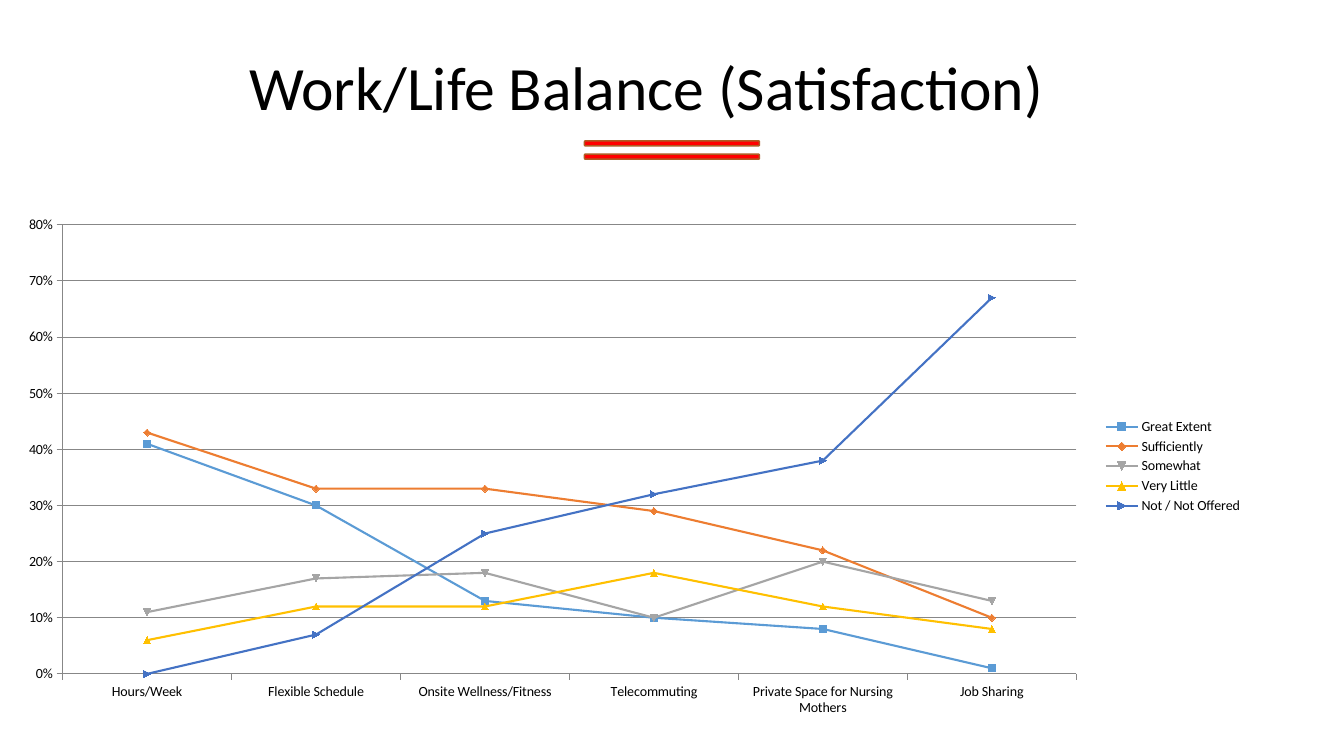
from pptx import Presentation
from pptx.chart.data import CategoryChartData
from pptx.dml.color import RGBColor
from pptx.enum.chart import XL_CHART_TYPE, XL_LEGEND_POSITION, XL_TICK_MARK
from pptx.enum.shapes import MSO_SHAPE
from pptx.enum.text import MSO_ANCHOR, PP_ALIGN
from pptx.util import Pt

# Content
TITLE = "Work/Life Balance (Satisfaction)"
TOPICS = ["Hours/Week", "Flexible Schedule", "Onsite Wellness/Fitness",
          "Telecommuting", "Private Space for Nursing Mothers", "Job Sharing"]
RATINGS = [
    ("Great Extent", "blue", [0.41, 0.3, 0.13, 0.1, 0.08, 0.01]),
    ("Sufficiently", "orange", [0.43, 0.33, 0.33, 0.29, 0.22, 0.1]),
    ("Somewhat", "gray", [0.11, 0.17, 0.18, 0.1, 0.2, 0.13]),
    ("Very Little", "gold", [0.06, 0.12, 0.12, 0.18, 0.12, 0.08]),
    ("Not / Not Offered", "navy", [0, 0.07, 0.25, 0.32, 0.38, 0.67]),
]
COLORS = {"blue": "5B9BD5", "orange": "ED7D31", "gray": "A5A5A5",
          "gold": "FFC000", "navy": "4472C4", "red": "FF0000",
          "rust": "AF5C24", "text": "000000", "grid": "878787"}
FONT = "Calibri"


def color(name):
    return RGBColor.from_string(COLORS[name])


def style(font, size):
    font.name, font.size = FONT, Pt(size)
    font.color.rgb = color("text")


def stroke(line, name, width):
    line.color.rgb = color(name)
    line.width = Pt(width)


deck = Presentation()
deck.slide_width, deck.slide_height = Pt(960), Pt(540)
slide = deck.slides.add_slide(deck.slide_layouts[6])

# Title
frame = slide.shapes.add_textbox(Pt(66), Pt(28.8), Pt(792), Pt(72)).text_frame
frame.word_wrap = True
frame.vertical_anchor = MSO_ANCHOR.MIDDLE
para = frame.paragraphs[0]
para.text = TITLE
para.alignment = PP_ALIGN.CENTER
para.line_spacing = 0.9
style(para.font, 44)

# Double rule under the title
for row in range(2):
    bar = slide.shapes.add_shape(MSO_SHAPE.ROUNDED_RECTANGLE, Pt(417.5),
                                 Pt(100.6 + 9.5 * row), Pt(125), Pt(3.6))
    bar.shadow.inherit = False
    bar.fill.solid()
    bar.fill.fore_color.rgb = color("red")
    stroke(bar.line, "rust", 1)

# Line chart
data = CategoryChartData(number_format="0%")
data.categories = TOPICS
for name, _, values in RATINGS:
    data.add_series(name, values)
chart = slide.shapes.add_chart(XL_CHART_TYPE.LINE_MARKERS, Pt(2.9), Pt(147.6),
                               Pt(892), Pt(370.8), data).chart
chart.has_title = False
style(chart.font, 10)
chart.has_legend = True
chart.legend.position = XL_LEGEND_POSITION.RIGHT
chart.legend.include_in_layout = False
chart.plots[0].vary_by_categories = False

for series, (_, tint, _) in zip(chart.plots[0].series, RATINGS):
    series.smooth = False
    stroke(series.format.line, tint, 1.5)
    series.marker.size = 5
    series.marker.format.fill.solid()
    series.marker.format.fill.fore_color.rgb = color(tint)
    stroke(series.marker.format.line, tint, 0.75)

# Axes
for axis in (chart.category_axis, chart.value_axis):
    axis.major_tick_mark = XL_TICK_MARK.OUTSIDE
    axis.minor_tick_mark = XL_TICK_MARK.NONE
    stroke(axis.format.line, "grid", 0.75)
scale = chart.value_axis
scale.minimum_scale, scale.maximum_scale, scale.major_unit = 0, 0.8, 0.1
scale.tick_labels.number_format = "0%"
scale.tick_labels.number_format_is_linked = False
stroke(scale.major_gridlines.format.line, "grid", 0.75)

deck.save("out.pptx")
